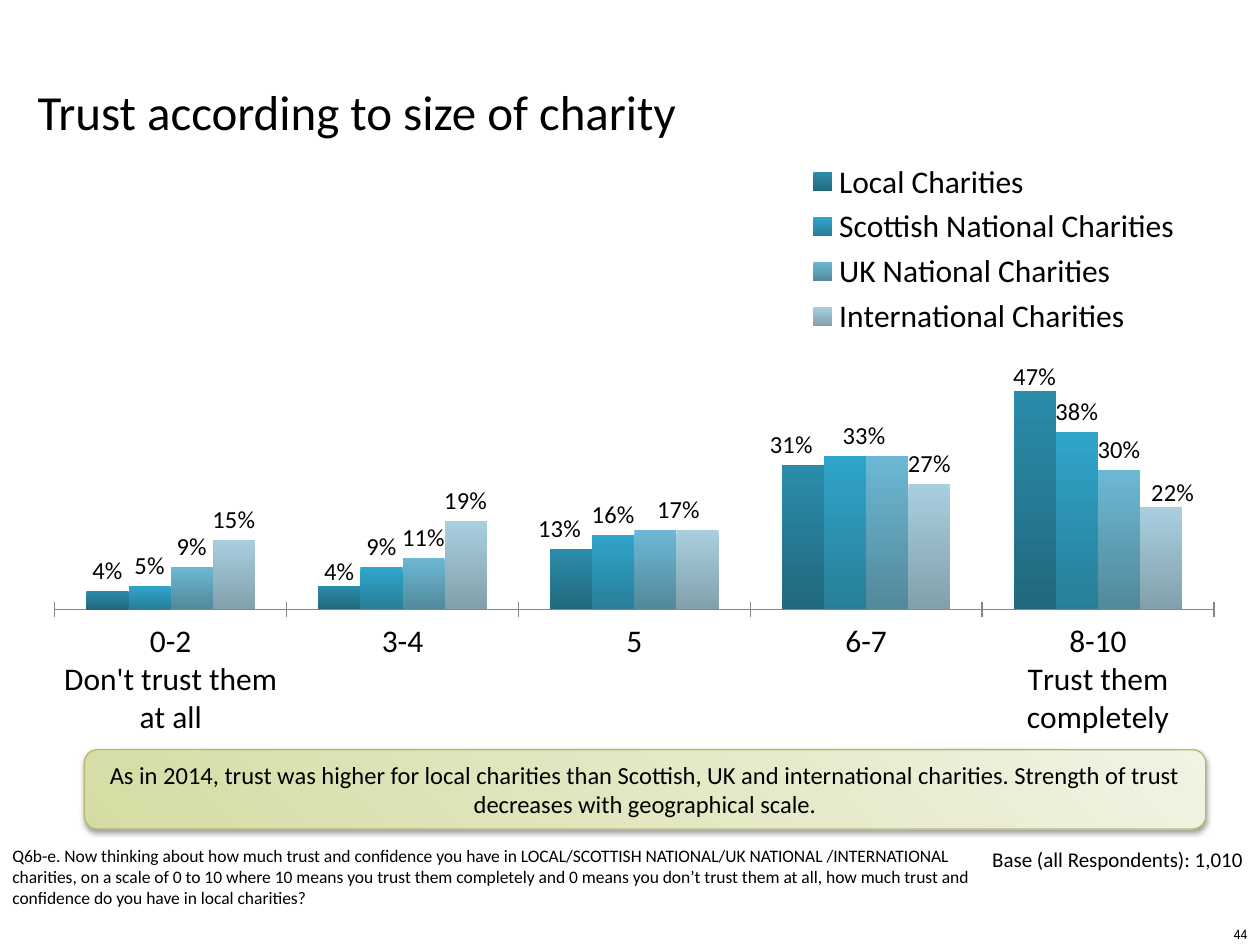
import pptx
import pptx.chart.data
import pptx.dml.color
import pptx.enum.chart
import pptx.enum.shapes
import pptx.enum.text
import pptx.oxml
import pptx.oxml.ns
import pptx.util

RGBColor = pptx.dml.color.RGBColor
ALIGN = pptx.enum.text.PP_ALIGN
ANCHOR = pptx.enum.text.MSO_ANCHOR
BLACK = RGBColor(0x00, 0x00, 0x00)
AXIS_GRAY = RGBColor(0x86, 0x86, 0x86)
CALLOUT_DARK = RGBColor(0xD5, 0xDC, 0xA3)
CALLOUT_LIGHT = RGBColor(0xF1, 0xF3, 0xE3)
CALLOUT_LINE = RGBColor(0xB7, 0xB8, 0x70)
BAR_GRADIENTS = [
    (RGBColor(0x2B, 0x8C, 0xAA), RGBColor(0x21, 0x69, 0x7E)),
    (RGBColor(0x2F, 0xA5, 0xCB), RGBColor(0x28, 0x7E, 0x97)),
    (RGBColor(0x6C, 0xB8, 0xD4), RGBColor(0x52, 0x89, 0x9B)),
    (RGBColor(0xA9, 0xCF, 0xDF), RGBColor(0x82, 0xA0, 0xAB)),
]
CATEGORIES = ["0-2\nDon't trust them at all", "3-4", "5", "6-7", "8-10\nTrust them completely"]
SERIES = {
    "Local Charities": (0.04, 0.05, 0.13, 0.31, 0.47),
    "Scottish National Charities": (0.05, 0.09, 0.16, 0.33, 0.38),
    "UK National Charities": (0.09, 0.11, 0.17, 0.33, 0.30),
    "International Charities": (0.15, 0.19, 0.17, 0.27, 0.22),
}
MOVED_LABELS = [
    (0, 1, 0, 0.01), (0, 2, -0.01, 0), (0, 3, -0.01, 0), (0, 4, 0, 0.01),
    (2, 2, 0.02, 0), (2, 3, -0.02, 0), (3, 4, 0.01, 0.01),
]
HIDDEN_LABELS = [(1, 3), (3, 2)]
QUESTION = (
    "Q6b-e. Now thinking about how much trust and confidence you have in LOCAL/SCOTTISH NATIONAL"
    "/UK NATIONAL /INTERNATIONAL charities, on a scale of 0 to 10 where 10 means you trust them "
    "completely and 0 means you don’t trust them at all, how much trust and confidence do you "
    "have in local charities?"
)
FINDING = (
    "As in 2014, trust was higher for local charities than Scottish, UK and international "
    "charities. Strength of trust decreases with geographical scale."
)


class SlideBuilder:
    """Adds styled elements to a slide on a grid of 100 columns by 75 rows."""

    def __init__(self, presentation):
        self.font = "Calibri"
        self.column = presentation.slide_width / 100
        self.row = presentation.slide_height / 75
        self.slide = presentation.slides.add_slide(presentation.slide_layouts[6])

    def box(self, left, top, columns, rows):
        return (
            int(left * self.column), int(top * self.row),
            int(columns * self.column), int(rows * self.row),
        )

    def style(self, font, size, name=None):
        font.size = pptx.util.Pt(size)
        font.name = name or self.font
        font.color.rgb = BLACK

    def gradient(self, fill, colors, angle):
        fill.gradient()
        fill.gradient_angle = angle
        for stop, color in zip(fill.gradient_stops, colors):
            stop.color.rgb = color

    def fill_text(self, shape, text, size, align, anchor, name=None):
        frame = shape.text_frame
        frame.word_wrap = True
        frame.vertical_anchor = anchor
        paragraph = frame.paragraphs[0]
        paragraph.alignment = align
        run = paragraph.add_run()
        run.text = text
        self.style(run.font, size, name)

    def text(self, box, text, size, align=ALIGN.LEFT, anchor=ANCHOR.TOP, name=None):
        shape = self.slide.shapes.add_textbox(*self.box(*box))
        self.fill_text(shape, text, size, align, anchor, name)

    def callout(self, box, text):
        shape = self.slide.shapes.add_shape(
            pptx.enum.shapes.MSO_SHAPE.ROUNDED_RECTANGLE, *self.box(*box))
        self.gradient(shape.fill, (CALLOUT_DARK, CALLOUT_LIGHT), 45)
        shape.line.color.rgb = CALLOUT_LINE
        shape.line.width = pptx.util.Pt(0.75)
        shape.shadow.inherit = False
        effects = shape._element.spPr.find(pptx.oxml.ns.qn("a:effectLst"))
        effects.append(pptx.oxml.parse_xml(
            f'<a:outerShdw {pptx.oxml.ns.nsdecls("a")} blurRad="{pptx.util.Pt(3.1)}" '
            f'dist="{pptx.util.Pt(1.6)}" dir="5400000" rotWithShape="0">'
            '<a:srgbClr val="000000"><a:alpha val="38000"/></a:srgbClr></a:outerShdw>'))
        self.fill_text(shape, text, 14, ALIGN.CENTER, ANCHOR.MIDDLE)

    def layout(self, parent, index, settings):
        for old in parent.findall(pptx.oxml.ns.qn("c:layout")):
            parent.remove(old)
        parts = "".join(f'<c:{key} val="{value}"/>' for key, value in settings.items())
        parent.insert(index, pptx.oxml.parse_xml(
            f'<c:layout {pptx.oxml.ns.nsdecls("c")}><c:manualLayout>{parts}'
            '</c:manualLayout></c:layout>'))

    def edge_layout(self, parent, index, x, y, w, h, **target):
        self.layout(parent, index, {**target, "xMode": "edge", "yMode": "edge",
                                    "x": x, "y": y, "w": w, "h": h})

    def axes(self, chart):
        value_axis = chart.value_axis
        value_axis.minimum_scale, value_axis.maximum_scale = 0, 1
        value_axis.major_unit = 0.1
        value_axis.has_major_gridlines = False
        value_axis.visible = False
        category_axis = chart.category_axis
        category_axis.major_tick_mark = pptx.enum.chart.XL_TICK_MARK.CROSS
        category_axis.format.line.color.rgb = AXIS_GRAY
        self.style(category_axis.tick_labels.font, 18)

    def labels(self, series):
        outside = pptx.enum.chart.XL_LABEL_POSITION.OUTSIDE_END
        for one in series:
            labels = one.data_labels
            labels.show_value = True
            labels.number_format, labels.number_format_is_linked = "0%", False
            labels.position = outside
            self.style(labels.font, 14)
        for number, point, x, y in MOVED_LABELS:
            label = series[number].points[point].data_label
            self.style(label.font, 14)
            label.position = outside
            self.layout(label._get_or_add_dLbl(), 1, {"x": x, "y": y})
        run = series[0].points[1].data_label.text_frame.paragraphs[0].add_run()
        run.text = "4%"
        self.style(run.font, 14)
        for number, point in HIDDEN_LABELS:
            element = series[number].points[point].data_label._get_or_add_dLbl()
            for child in list(element)[1:]:
                element.remove(child)
            element.append(pptx.oxml.parse_xml(
                f'<c:delete {pptx.oxml.ns.nsdecls("c")} val="1"/>'))

    def chart(self, box):
        data = pptx.chart.data.CategoryChartData(number_format="0%")
        data.categories = CATEGORIES
        for name, values in SERIES.items():
            data.add_series(name, values)
        chart = self.slide.shapes.add_chart(
            pptx.enum.chart.XL_CHART_TYPE.COLUMN_CLUSTERED, *self.box(*box), data).chart
        self.style(chart.font, 18)
        chart.has_title = False
        chart.has_legend = True
        chart.legend.position = pptx.enum.chart.XL_LEGEND_POSITION.RIGHT
        chart.legend.include_in_layout = False
        self.style(chart.legend.font, 18)
        self.edge_layout(chart.legend._element, 1, 0.64, 0.02, 0.34, 0.3)
        plot = chart.plots[0]
        plot.gap_width, plot.overlap = 150, 0
        plot.vary_by_categories = False
        plot_area = plot._element.getparent()
        self.edge_layout(plot_area, 0, 0, 0, 1, 0.75, layoutTarget="inner")
        self.axes(chart)
        series = list(plot.series)
        for one, colors in zip(series, BAR_GRADIENTS):
            self.gradient(one.format.fill, colors, 270)
        self.labels(series)


def main():
    presentation = pptx.Presentation()
    presentation.slide_width = pptx.util.Inches(10)
    presentation.slide_height = pptx.util.Inches(7.5)
    builder = SlideBuilder(presentation)
    builder.text((76.7, 72.1, 23.3, 4), "44", 8, ALIGN.RIGHT, ANCHOR.MIDDLE, "League Spartan")
    builder.text((0, 66.6, 78.3, 6.1), QUESTION, 10)
    builder.chart((4.3, 11.4, 92.1, 49.3))
    builder.text((14.9, 66.7, 85.1, 3), "Base (all Respondents): 1,010 ", 12, ALIGN.RIGHT)
    builder.callout((6.7, 59.5, 89, 6.3), FINDING)
    builder.text((2, 2.9, 71.7, 11.8), "Trust according to size of charity", 28,
                 anchor=ANCHOR.MIDDLE)
    presentation.save("out.pptx")


if __name__ == "__main__":
    main()
